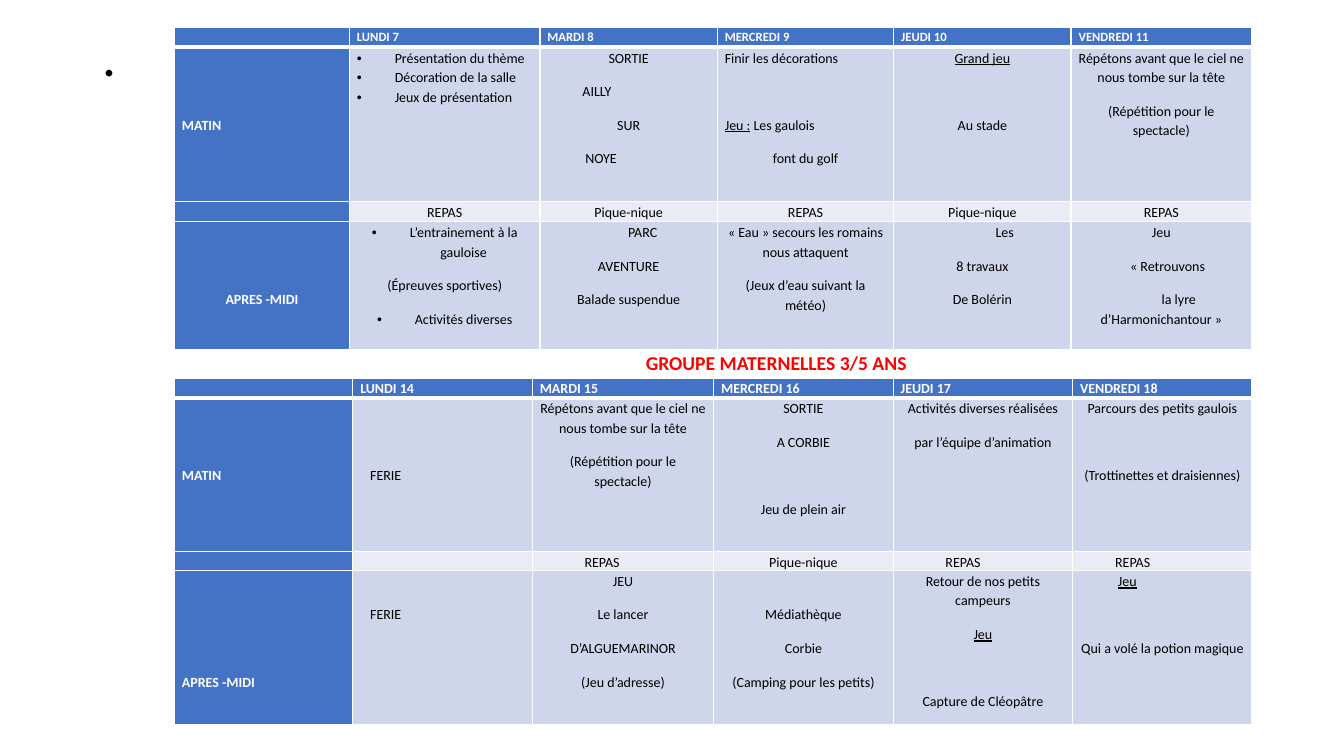
"""Build the two-week holiday timetable slide for the nursery group."""
from dataclasses import dataclass
from typing import Any

from lxml.etree import SubElement
from pptx import Presentation
from pptx.dml.color import RGBColor
from pptx.enum.text import MSO_ANCHOR, PP_ALIGN
from pptx.oxml.ns import qn
from pptx.util import Pt

FONT = "Calibri"
BLUE, PALE, LIGHT = "4472C4", "CFD5EA", "E9EBF5"
WHITE, BLACK, RED = "FFFFFF", "000000", "FF0000"
GAP = 10
SKIP = 34
STEP = 24


@dataclass
class Line:
    text: str
    center: bool = True
    left: float = 0
    first: float = 0
    after: float = GAP
    under: str = ""
    mark: bool = False


@dataclass
class Entry:
    lines: list[Line]
    top: float = 0


@dataclass
class Week:
    top: float
    head: float
    widths: list[float]
    heights: list[float]
    rows: list[list[Entry]]


def color(code: str) -> RGBColor:
    return RGBColor.from_string(code)


def style(run: Any, size: float, code: str, bold: bool = False) -> None:
    run.font.name = FONT
    run.font.size = Pt(size)
    run.font.bold = bold
    run.font.color.rgb = color(code)


def plain(text: str, left: float = 0, top: float = 0) -> Entry:
    return Entry([Line(text, center=False, left=left)], top)


def mid(*texts: str, top: float = 0) -> Entry:
    return Entry([Line(text) for text in texts], top)


def point(text: str, center: bool = False, after: float = 0) -> Line:
    return Line(text, center, 27, -27, after, mark=True)


def border(cell: Any, base: float) -> None:
    props = cell._tc.get_or_add_tcPr()
    for spot, (side, width) in enumerate(
        [("lnL", 1), ("lnR", 1), ("lnT", 1), ("lnB", base)]
    ):
        edge = SubElement(props, qn(f"a:{side}"), w=str(Pt(width)))
        SubElement(SubElement(edge, qn("a:solidFill")), qn("a:srgbClr"), val=WHITE)
        props.insert(spot, edge)


def write(para: Any, line: Line, size: float, code: str, bold: bool) -> None:
    para.text = line.under or line.text
    if line.under and line.text:
        para.add_run().text = line.text
    for run in para.runs:
        style(run, size, code, bold)
    if line.under:
        para.runs[0].font.underline = True
    para.alignment = PP_ALIGN.CENTER if line.center else PP_ALIGN.LEFT
    para.line_spacing = 1.15
    para.space_after = Pt(line.after)
    props = para._p.get_or_add_pPr()
    props.set("marL", str(Pt(line.left)))
    props.set("indent", str(Pt(line.first)))
    if line.mark:
        SubElement(props, qn("a:buFont"), typeface="Arial")
        SubElement(props, qn("a:buChar"), char="•")


def fill(cell: Any, entry: Entry, size: float, shade: str) -> None:
    dark = shade == BLUE
    cell.fill.solid()
    cell.fill.fore_color.rgb = color(shade)
    cell.margin_left = cell.margin_right = Pt(5.4)
    cell.margin_top, cell.margin_bottom = Pt(entry.top), Pt(0)
    frame = cell.text_frame
    for spot, line in enumerate(entry.lines):
        para = frame.add_paragraph() if spot else frame.paragraphs[0]
        write(para, line, size, WHITE if dark else BLACK, dark)
    if not entry.lines:
        SubElement(frame.paragraphs[0]._p, qn("a:endParaRPr"), sz="900")


def draw(slide: Any, week: Week) -> None:
    count = len(week.widths)
    frame = slide.shapes.add_table(
        len(week.rows), count, Pt(124.6), Pt(week.top),
        Pt(sum(week.widths)), Pt(sum(week.heights)),
    )
    table = frame.table
    table.horz_banding = False
    for col, width in zip(table.columns, week.widths):
        col.width = Pt(width)
    for r, (entries, height) in enumerate(zip(week.rows, week.heights)):
        table.rows[r].height = Pt(height)
        for c, entry in enumerate(entries):
            shade = BLUE if r == 0 or c == 0 else LIGHT if r == 2 else PALE
            fill(table.cell(r, c), entry, 10 if r else week.head, shade)
            border(table.cell(r, c), 1 if r else 3)


def label(slide: Any, text: str, box: tuple[float, float, float, float],
          size: float, code: str, center: bool) -> None:
    frame = slide.shapes.add_textbox(*map(Pt, box)).text_frame
    frame.text = text
    frame.word_wrap = center
    frame.vertical_anchor = MSO_ANCHOR.MIDDLE
    para = frame.paragraphs[0]
    para.alignment = PP_ALIGN.CENTER if center else PP_ALIGN.LEFT
    para.line_spacing = 1.0 if center else 0.9
    style(para.runs[0], size, code, center)


BLANK = Entry([])
SHOW = mid("Répétons avant que le ciel ne nous tombe sur la tête",
           "(Répétition pour le spectacle)")
MEAL, LUNCH = mid("REPAS"), mid("Pique-nique")

WEEKS = [
    Week(19.4, 9, [125, 136.1, 126.7, 126, 126.7, 128.9], [14.4, 110.4, 14.2, 91.4], [
        [BLANK, *map(plain, ["LUNDI 7", "MARDI 8", "MERCREDI 9", "JEUDI 10",
                             "VENDREDI 11"])],
        [plain("MATIN", top=2 * STEP),
         Entry([point("Présentation du thème"), point("Décoration de la salle"),
                point("Jeux de présentation", after=GAP)]),
         Entry([Line("SORTIE"), Line("AILLY", False, 25), Line("SUR"),
                Line("NOYE", False, 27)]),
         Entry([Line("Finir les décorations", False, after=SKIP),
                Line(" Les gaulois", False, under="Jeu :"), Line("font du golf")]),
         Entry([Line("", under="Grand jeu", after=SKIP), Line("Au stade")]),
         SHOW],
        [BLANK, MEAL, LUNCH, MEAL, LUNCH, MEAL],
        [mid("APRES -MIDI", top=2 * STEP),
         Entry([point("L’entrainement à la gauloise", True, GAP),
                Line("(Épreuves sportives)"),
                point("Activités diverses", True, GAP)]),
         Entry([Line("PARC", left=20), Line("AVENTURE"), Line("Balade suspendue")]),
         mid("« Eau » secours les romains nous attaquent",
             "(Jeux d’eau suivant la météo)"),
         Entry([Line("Les", left=32), Line("8 travaux"), Line("De Bolérin")]),
         Entry([Line("Jeu"), Line("« Retrouvons", left=9),
                Line("la lyre d’Harmonichantour »", first=25)])],
    ]),
    Week(270, 10, [127.4, 128.2, 129.6, 128.2, 128.2, 128.2], [14.2, 109.6, 13.8, 109.8], [
        [BLANK, *map(plain, ["LUNDI 14", "MARDI 15", "MERCREDI 16", "JEUDI 17",
                             "VENDREDI 18"])],
        [plain("MATIN", top=2 * STEP), plain("FERIE", 7, 2 * STEP), SHOW,
         Entry([Line("SORTIE"), Line("A CORBIE", after=SKIP),
                Line("Jeu de plein air")]),
         mid("Activités diverses réalisées", "par l’équipe d’animation"),
         Entry([Line("Parcours des petits gaulois", after=SKIP),
                Line("(Trottinettes et draisiennes)")])],
        [BLANK, BLANK, plain("REPAS", 32), LUNCH, plain("REPAS", 32),
         plain("REPAS", 25)],
        [plain("APRES -MIDI", top=3 * STEP), plain("FERIE", 7, STEP),
         mid("JEU", "Le lancer", "D’ALGUEMARINOR", "(Jeu d’adresse)"),
         mid("Médiathèque", "Corbie", "(Camping pour les petits)", top=STEP),
         Entry([Line("Retour de nos petits campeurs"),
                Line("", under="Jeu", after=SKIP), Line("Capture de Cléopâtre")]),
         Entry([Line("", False, 27, under="Jeu", after=SKIP),
                Line("Qui a volé la potion magique")])],
    ]),
]


def main() -> None:
    deck = Presentation()
    deck.slide_width, deck.slide_height = Pt(960), Pt(540)
    slide = deck.slides.add_slide(deck.slide_layouts[6])
    label(slide, ".", (66.2, 28.8, 18, 26.6), 39.6, BLACK, False)
    for week in WEEKS:
        draw(slide, week)
    label(slide, "GROUPE MATERNELLES 3/5 ANS", (364.6, 241.2, 380, 36), 14, RED, True)
    deck.save("out.pptx")


if __name__ == "__main__":
    main()
